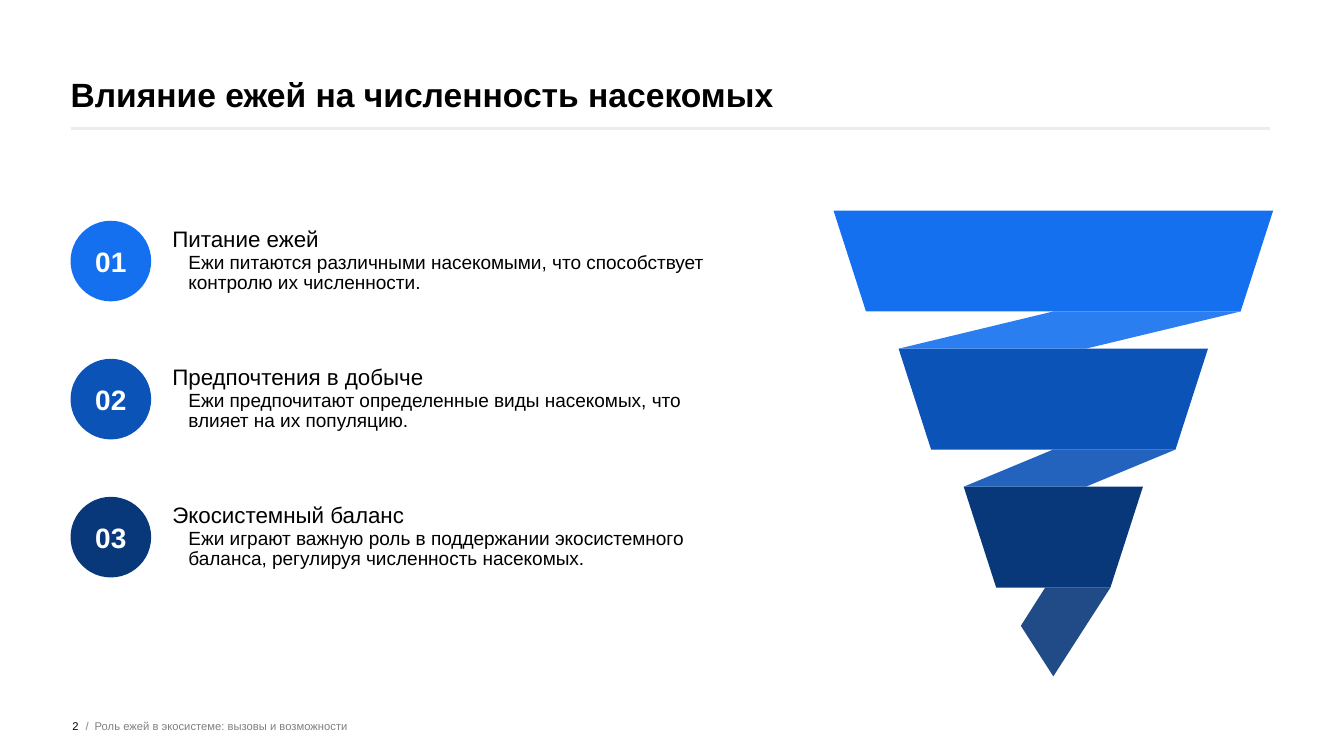
from dataclasses import dataclass

from lxml import etree
from pptx import Presentation
from pptx.dml.color import RGBColor
from pptx.enum import shapes, text
from pptx.oxml.ns import qn
from pptx.util import Pt

BLACK = RGBColor(0x00, 0x00, 0x00)
WHITE = RGBColor(0xFF, 0xFF, 0xFF)
GRAY = RGBColor(0x80, 0x80, 0x80)
RULE_GRAY = RGBColor(0xEA, 0xEC, 0xF0)
BRIGHT_BLUE = RGBColor(0x15, 0x70, 0xEF)
MID_BLUE = RGBColor(0x0C, 0x53, 0xB7)
DARK_BLUE = RGBColor(0x08, 0x38, 0x7A)

FONT = "Arial"
LEFT = 50.4
ROW_TOP, ROW_HEIGHT, ROW_PITCH = 150.5, 72, 98.6
BADGE_SIZE = 57.6
FUNNEL_CENTER, FUNNEL_HALF = 752.4, 157
HALF_STEP, SLOPE = 46.5, 23.2  # narrowing per row, and within one band

Point = tuple[float, float]


@dataclass
class Topic:
    number: str
    heading: str
    detail: str
    color: RGBColor


@dataclass
class Label:
    words: str
    left: float
    top: float
    width: float
    height: float
    size: float
    color: RGBColor = GRAY
    bold: bool = False
    align: text.PP_ALIGN = text.PP_ALIGN.LEFT
    anchor: text.MSO_ANCHOR = text.MSO_ANCHOR.MIDDLE
    space_before: float = 10


TOPICS = [
    Topic("01", "Питание ежей",
          "Ежи питаются различными насекомыми, что способствует контролю их численности.",
          BRIGHT_BLUE),
    Topic("02", "Предпочтения в добыче",
          "Ежи предпочитают определенные виды насекомых, что влияет на их популяцию.",
          MID_BLUE),
    Topic("03", "Экосистемный баланс",
          "Ежи играют важную роль в поддержании экосистемного баланса, "
          "регулируя численность насекомых.",
          DARK_BLUE),
]

LABELS = [
    Label("Влияние ежей на численность насекомых", LEFT, 0, 859.7, 81.4, 24,
          BLACK, bold=True, anchor=text.MSO_ANCHOR.BOTTOM),
    Label("2", 33.8, 496.8, 22.3, 43.2, 8, BLACK, align=text.PP_ALIGN.RIGHT),
    Label(" /", 59, 497.5, 8.6, 42.5, 8, space_before=0),
    Label("Роль ежей в экосистеме: вызовы и возможности", 67.7, 496.8, 551.5, 43.2, 8),
]


def prepare_frame(frame, anchor=text.MSO_ANCHOR.MIDDLE) -> None:
    frame.word_wrap = True
    frame.vertical_anchor = anchor
    frame.margin_left = frame.margin_top = frame.margin_right = frame.margin_bottom = 0


def style(paragraph, size: float, color: RGBColor, bold: bool = False) -> None:
    for run in paragraph.runs:
        run.font.name = FONT
        run.font.size = Pt(size)
        run.font.bold = bold
        run.font.color.rgb = color


def draw_label(slide, label: Label) -> None:
    box = slide.shapes.add_textbox(Pt(label.left), Pt(label.top),
                                   Pt(label.width), Pt(label.height))
    prepare_frame(box.text_frame, label.anchor)
    line = box.text_frame.paragraphs[0]
    line.text = label.words
    line.alignment = label.align
    line.space_before = Pt(label.space_before)
    style(line, label.size, label.color, label.bold)


def paint(shape, color: RGBColor, opacity: int = 100) -> None:
    shape.shadow.inherit = False
    shape.line.fill.background()
    shape.fill.solid()
    shape.fill.fore_color.rgb = color
    if opacity < 100:
        tint = shape.fill._xPr.find(qn("a:solidFill"))[0]
        etree.SubElement(tint, qn("a:alpha")).set("val", str(opacity * 1000))


def draw_polygon(slide, corners: list[Point], color: RGBColor, opacity: int = 100) -> None:
    start, *rest = [(Pt(x), Pt(y)) for x, y in corners]
    outline = slide.shapes.build_freeform(*start)
    outline.add_line_segments(rest, close=True)
    paint(outline.convert_to_shape(), color, opacity)


def draw_rule(slide) -> None:
    rule = slide.shapes.add_connector(shapes.MSO_CONNECTOR.STRAIGHT,
                                      Pt(LEFT), Pt(91.6), Pt(907.2), Pt(91.6))
    rule.line.color.rgb = RULE_GRAY
    rule.line.width = Pt(2)
    etree.SubElement(rule._element.spPr, qn("a:effectLst"))


def draw_funnel(slide) -> None:
    center = FUNNEL_CENTER
    ribbons = []
    for row, topic in enumerate(TOPICS):
        top = ROW_TOP + row * ROW_PITCH
        bottom = top + ROW_HEIGHT
        half = FUNNEL_HALF - row * HALF_STEP
        low_half = half - SLOPE
        draw_polygon(slide, [(center - half, top), (center + half, top),
                             (center + low_half, bottom), (center - low_half, bottom)],
                     topic.color)
        if row < len(TOPICS) - 1:
            next_top = top + ROW_PITCH
            ribbon = [(center, bottom), (center - half + HALF_STEP, next_top),
                      (center + SLOPE, next_top)]
        else:
            ribbon = [(center - 5.8, bottom), (center - SLOPE, 447), (center, 483.1)]
        ribbons.append(([(center + low_half, bottom)] + ribbon, topic.color))
    # Translucent folds lie over the bands
    for corners, color in ribbons:
        draw_polygon(slide, corners, color, opacity=90)


def draw_topic(slide, row: int, topic: Topic) -> None:
    top = ROW_TOP + row * ROW_PITCH

    # Numbered badge
    badge = slide.shapes.add_shape(shapes.MSO_SHAPE.OVAL, Pt(LEFT),
                                   Pt(top + (ROW_HEIGHT - BADGE_SIZE) / 2),
                                   Pt(BADGE_SIZE), Pt(BADGE_SIZE))
    paint(badge, topic.color)
    prepare_frame(badge.text_frame)
    number = badge.text_frame.paragraphs[0]
    number.text = topic.number
    number.alignment = text.PP_ALIGN.CENTER
    style(number, 20, WHITE, bold=True)

    # Heading with indented detail
    box = slide.shapes.add_textbox(Pt(123.1), Pt(top), Pt(388.8), Pt(ROW_HEIGHT))
    prepare_frame(box.text_frame)
    heading = box.text_frame.paragraphs[0]
    detail = box.text_frame.add_paragraph()
    heading.text, detail.text = topic.heading, topic.detail
    for paragraph, size in ((heading, 16), (detail, 13.6)):
        paragraph.line_spacing = 0.9
        style(paragraph, size, BLACK)
    indent = detail._p.get_or_add_pPr()
    indent.set("marL", str(Pt(11.5)))
    indent.set("indent", "0")


def main() -> None:
    deck = Presentation()
    deck.slide_width, deck.slide_height = Pt(960), Pt(540)
    slide = deck.slides.add_slide(deck.slide_layouts[6])

    draw_funnel(slide)
    draw_rule(slide)
    for label in LABELS:
        draw_label(slide, label)
    for row, topic in enumerate(TOPICS):
        draw_topic(slide, row, topic)

    deck.save("out.pptx")


if __name__ == "__main__":
    main()
